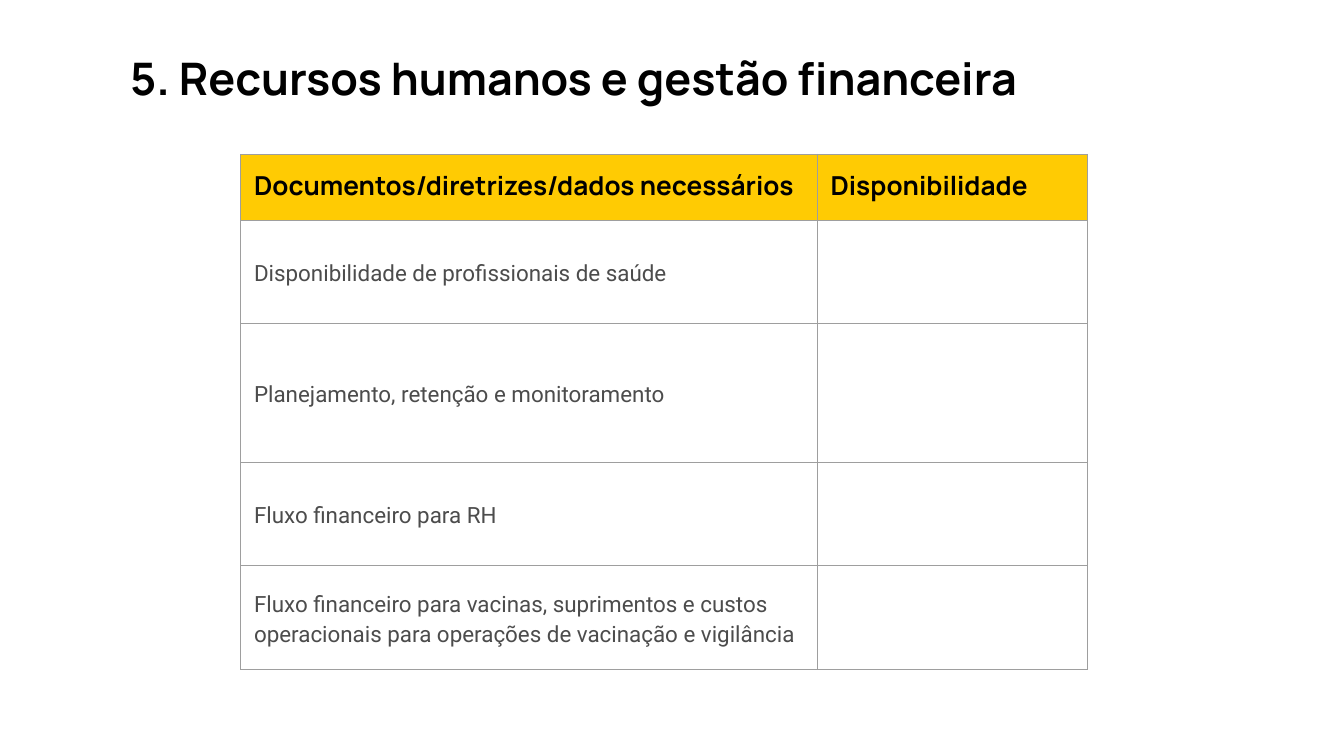
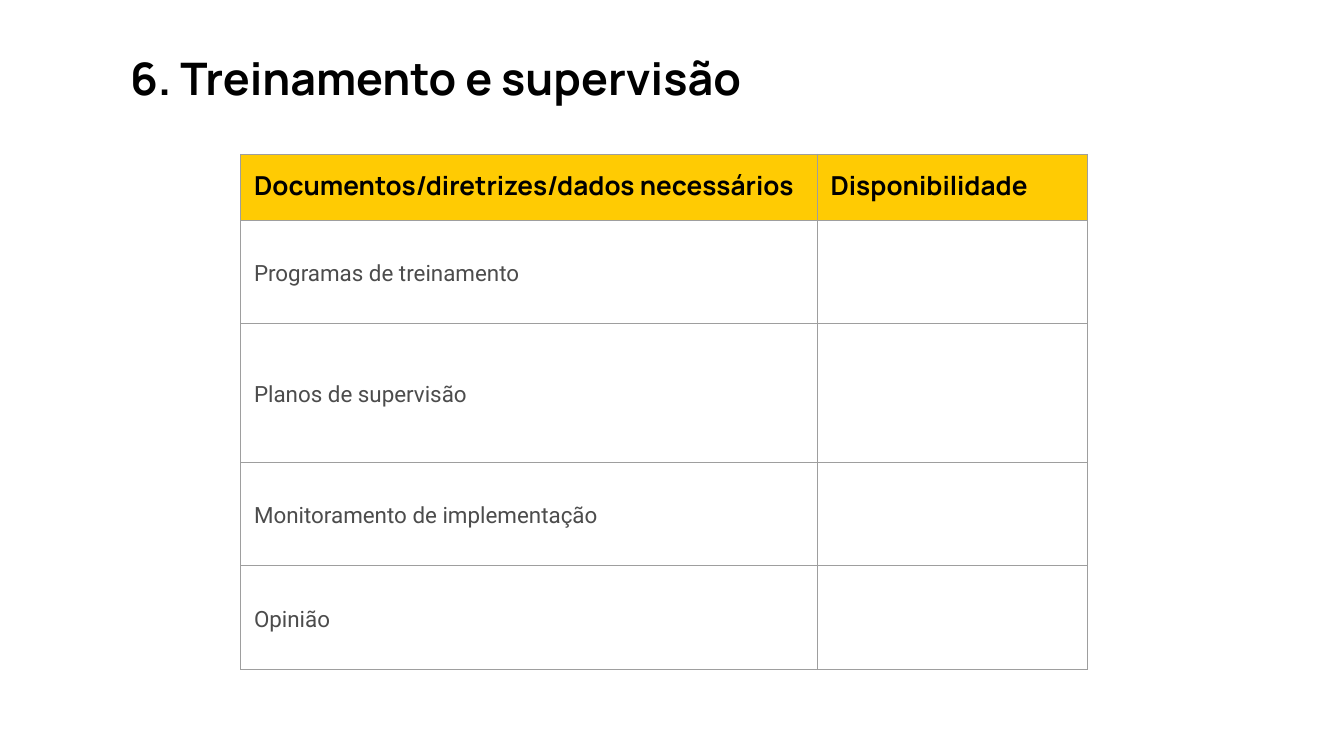
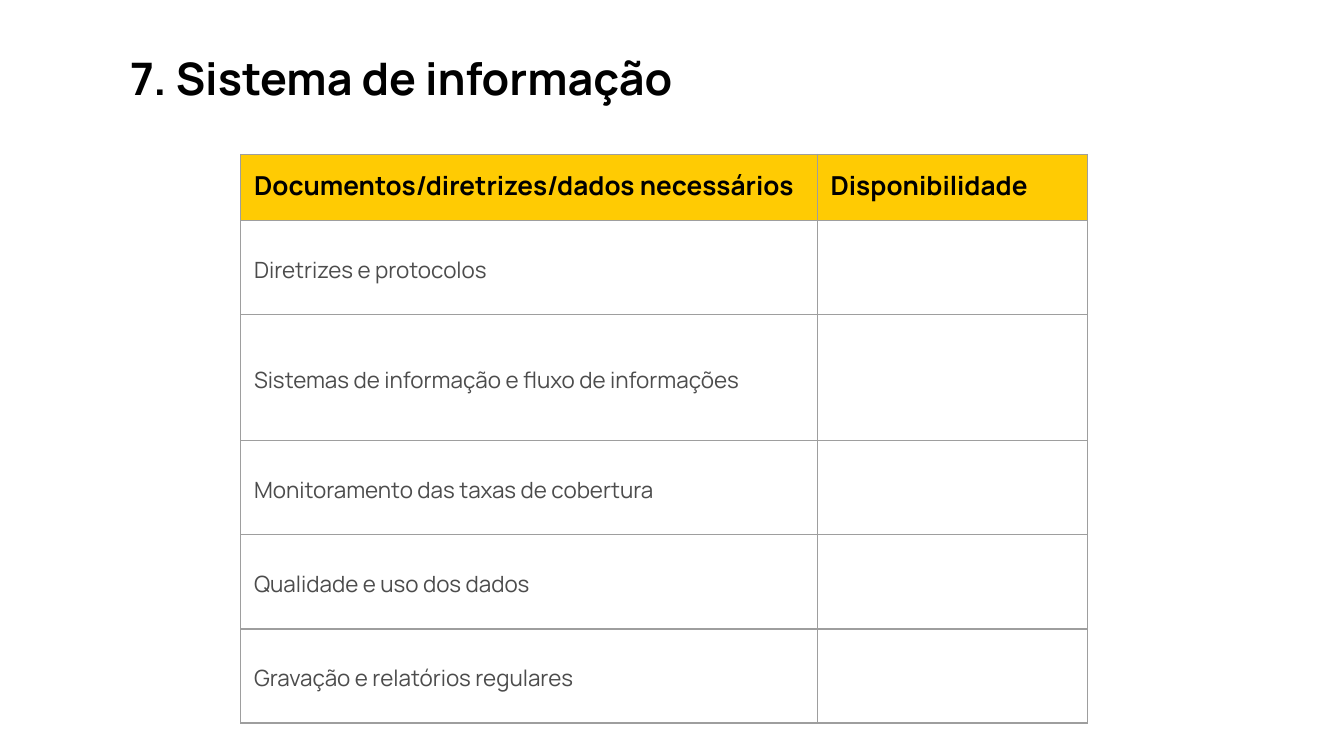
"""Build three checklist slides, each with a title and an availability table."""
import pptx
import pptx.dml.color
import pptx.enum.text
import pptx.oxml
import pptx.oxml.ns
import pptx.util

PX = 4572
INSET = 20 * PX
BLACK = pptx.dml.color.RGBColor(0x00, 0x00, 0x00)
GRAY = pptx.dml.color.RGBColor(0x4C, 0x4C, 0x4C)
BORDER = pptx.dml.color.RGBColor(0x9E, 0x9E, 0x9E)
YELLOW = pptx.dml.color.RGBColor(0xFF, 0xCB, 0x03)
HEADINGS = ["Documentos/diretrizes/dados necessários", "Disponibilidade"]
COLUMN_WIDTHS = [858, 402]
HEADER_HEIGHT = 98

SLIDES = [
    ("5. Recursos humanos e gestão financeira", "Roboto", 154, 206, [
        "Disponibilidade de profissionais de saúde",
        "Planejamento, retenção e monitoramento",
        "Fluxo financeiro para RH",
        "Fluxo financeiro para vacinas, suprimentos e custos "
        "operacionais para operações de vacinação e vigilância",
    ]),
    ("6. Treinamento e supervisão", "Roboto", 154, 206, [
        "Programas de treinamento",
        "Planos de supervisão",
        "Monitoramento de implementação",
        "Opinião",
    ]),
    ("7. Sistema de informação", "Manrope", 140, 188, [
        "Diretrizes e protocolos",
        "Sistemas de informação e fluxo de informações",
        "Monitoramento das taxas de cobertura",
        "Qualidade e uso dos dados",
        "Gravação e relatórios regulares",
    ]),
]


def write(tf, text, size, font="Manrope", color=BLACK, bold=True, spacing=None):
    p = tf.paragraphs[0]
    p.line_spacing = spacing
    r = p.add_run()
    r.text = text
    r.font.size = pptx.util.Pt(size)
    r.font.name = font
    r.font.color.rgb = color
    r.font.bold = bold


def format_cell(cell, fill=None):
    cell.margin_left = cell.margin_right = INSET
    cell.margin_top = cell.margin_bottom = INSET
    tcPr = cell._tc.get_or_add_tcPr()
    for side in ("lnL", "lnR", "lnT", "lnB"):
        tcPr.append(pptx.oxml.parse_xml(
            f'<a:{side} {pptx.oxml.ns.nsdecls("a")} w="{pptx.util.Pt(0.75)}">'
            f'<a:solidFill><a:srgbClr val="{BORDER}"/></a:solidFill></a:{side}>'))
    if fill is None:
        cell.fill.background()
    else:
        cell.fill.solid()
        cell.fill.fore_color.rgb = fill


prs = pptx.Presentation()
prs.slide_width, prs.slide_height = 2000 * PX, 1125 * PX

for title, body_font, row_height, tall_height, items in SLIDES:
    s = prs.slides.add_slide(prs.slide_layouts[6])
    sp = s.shapes.add_textbox(174 * PX, 56 * PX, 1826 * PX, 118 * PX)
    tf = sp.text_frame
    tf.word_wrap = True
    tf.margin_left = tf.margin_right = tf.margin_top = tf.margin_bottom = INSET
    write(tf, title, 24)

    heights = [HEADER_HEIGHT] + [row_height] * len(items)
    heights[2] = tall_height
    table = s.shapes.add_table(len(heights), len(HEADINGS), 358 * PX, 230 * PX,
                               sum(COLUMN_WIDTHS) * PX, sum(heights) * PX).table
    table.first_row = table.horz_banding = False
    for column, width in zip(table.columns, COLUMN_WIDTHS):
        column.width = width * PX
    for row, height in zip(table.rows, heights):
        row.height = height * PX

    for col, heading in enumerate(HEADINGS):
        cell = table.cell(0, col)
        format_cell(cell, fill=YELLOW)
        write(cell.text_frame, heading, 14)
    for row, item in enumerate(items, start=1):
        for col in range(len(HEADINGS)):
            format_cell(table.cell(row, col))
        cell = table.cell(row, 0)
        cell.vertical_anchor = pptx.enum.text.MSO_ANCHOR.MIDDLE
        write(cell.text_frame, item, 12, font=body_font, color=GRAY,
              bold=False, spacing=1.15)

prs.save("out.pptx")
